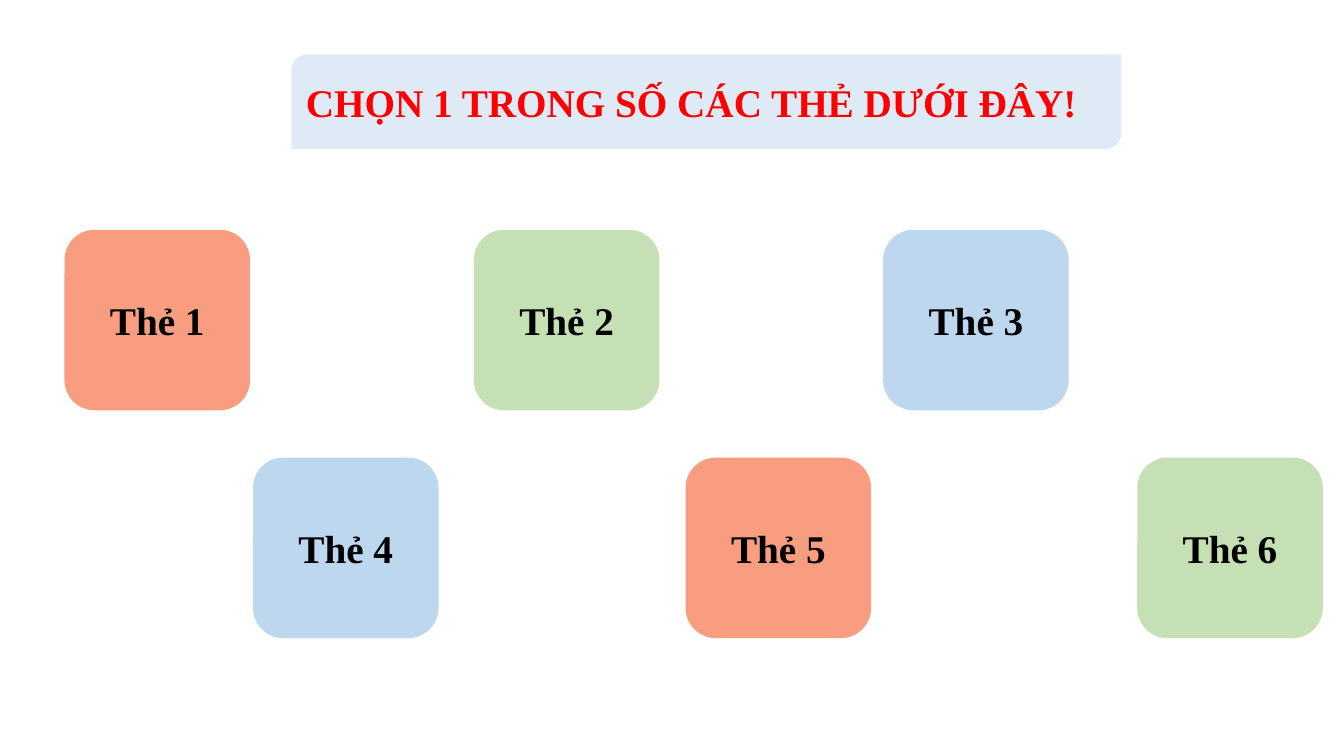
from pptx import Presentation
from pptx.dml.color import RGBColor
from pptx.enum.shapes import MSO_SHAPE as Preset
from pptx.enum.text import MSO_ANCHOR as Anchor, PP_ALIGN as Align
from pptx.util import Emu, Pt

EMU_PER_PX = 9144  # 100 px to the inch
FONT = "Times New Roman"
CORAL, GREEN, BLUE = "F89D80", "C5E0B4", "BDD7EE"
CARD_WIDTH, CARD_HEIGHT = 184, 179
CARD_ROWS = [
    (228, [(64, CORAL), (470, GREEN), (876, BLUE)]),
    (454, [(251, BLUE), (680, CORAL), (1128, GREEN)]),
]


def px(length):
    return Emu(length * EMU_PER_PX)


def color(value):
    return RGBColor.from_string(value)


def write_text(shape, text, *, size=28, ink="000000", bold=True, align=Align.CENTER):
    frame = shape.text_frame
    frame.word_wrap = True
    frame.vertical_anchor = Anchor.MIDDLE
    paragraph = frame.paragraphs[0]
    paragraph.alignment = align
    run = paragraph.add_run()
    run.text = text
    run.font.name = FONT
    run.font.size = Pt(size)
    run.font.bold = bold
    run.font.color.rgb = color(ink)


def add_panel(slide, preset, left, top, width, height, fill):
    """Add a filled preset shape without outline or shadow."""
    shape = slide.shapes.add_shape(preset, px(left), px(top), px(width), px(height))
    shape.shadow.inherit = False
    shape.fill.solid()
    shape.fill.fore_color.rgb = color(fill)
    shape.line.fill.background()
    return shape


def add_title(slide, text):
    banner = add_panel(slide, Preset.ROUND_2_DIAG_RECTANGLE, 289, 54, 823, 94, "DEEBF7")
    write_text(banner, text, ink="FF0000", align=Align.JUSTIFY)


def add_cards(slide):
    number = 0
    for top, cards in CARD_ROWS:
        for left, fill in cards:
            number += 1
            card = add_panel(slide, Preset.ROUNDED_RECTANGLE, left, top,
                             CARD_WIDTH, CARD_HEIGHT, fill)
            write_text(card, f"Thẻ {number}")


def main():
    presentation = Presentation()
    presentation.slide_width = px(1333)
    presentation.slide_height = px(750)
    slide = presentation.slides.add_slide(presentation.slide_layouts[6])
    add_cards(slide)
    add_title(slide, "CHỌN 1 TRONG SỐ CÁC THẺ DƯỚI ĐÂY!")
    presentation.save("out.pptx")


if __name__ == "__main__":
    main()
